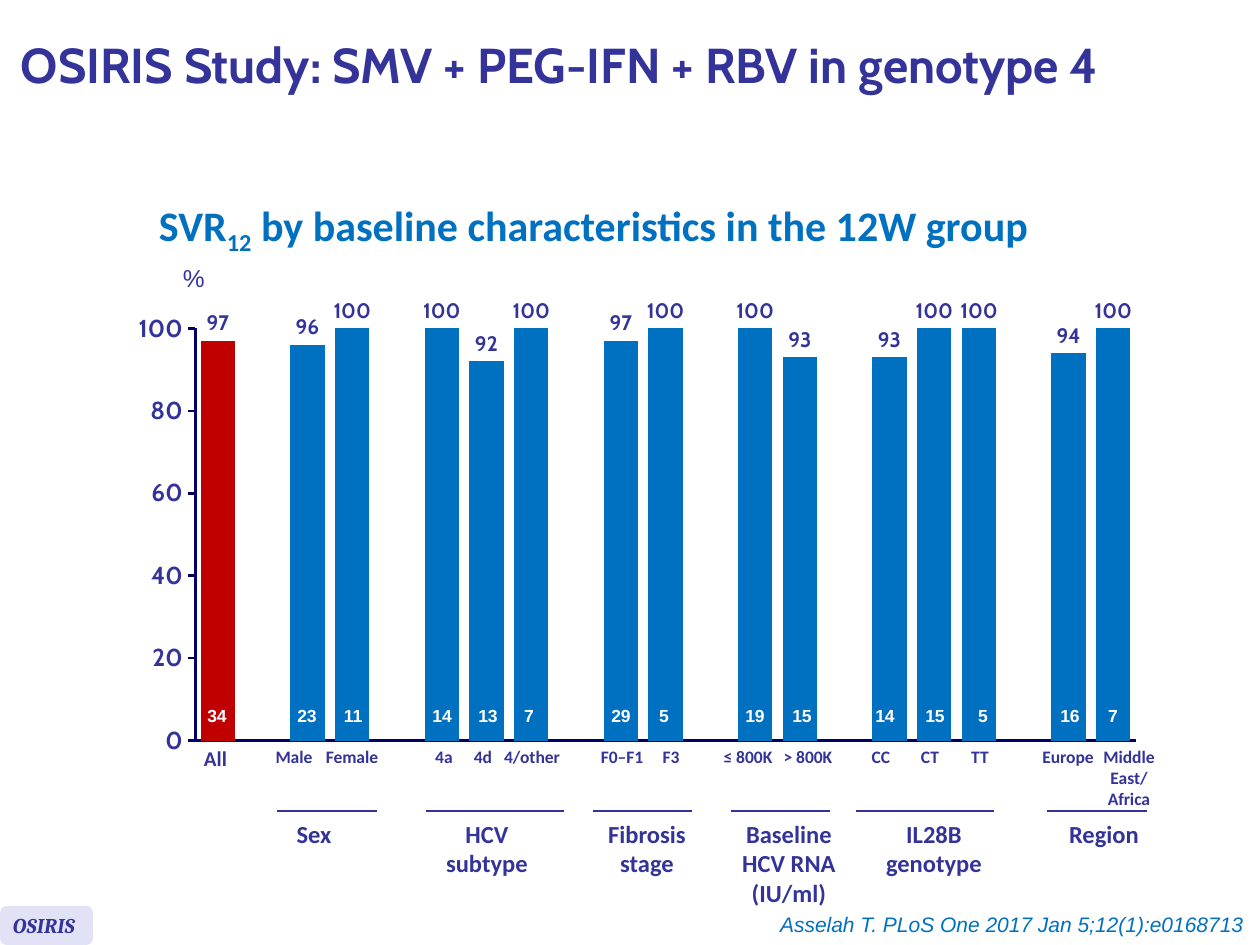
from lxml import etree
from pptx import Presentation
from pptx.chart.data import CategoryChartData
from pptx.dml.color import RGBColor
from pptx.enum.chart import XL_CHART_TYPE, XL_LABEL_POSITION, XL_TICK_LABEL_POSITION, XL_TICK_MARK
from pptx.enum.shapes import MSO_CONNECTOR, MSO_SHAPE
from pptx.enum.text import MSO_ANCHOR, PP_ALIGN
from pptx.oxml import parse_xml
from pptx.oxml.ns import nsdecls, qn
from pptx.util import Pt

COLUMNS = XL_CHART_TYPE.COLUMN_CLUSTERED
OUTSIDE_END = XL_LABEL_POSITION.OUTSIDE_END
NO_LABELS = XL_TICK_LABEL_POSITION.NONE
TICK_NONE, TICK_OUT = XL_TICK_MARK.NONE, XL_TICK_MARK.OUTSIDE
STRAIGHT = MSO_CONNECTOR.STRAIGHT
ROUNDED = MSO_SHAPE.ROUNDED_RECTANGLE
TOP, MIDDLE = MSO_ANCHOR.TOP, MSO_ANCHOR.MIDDLE
LEFT, CENTER, RIGHT = PP_ALIGN.LEFT, PP_ALIGN.CENTER, PP_ALIGN.RIGHT

EMU_PER_PX = 914400 / 126
COLORS = {
    "indigo": "333399", "navy": "000066", "blue": "0070C0", "red": "C00000",
    "lavender": "E2E2F6", "white": "FFFFFF", "black": "000000",
}
PLOT_AREA = {"x": 0.126, "y": 0.13, "w": 0.772, "h": 0.538}

# Overall bar: value, patients, centre of the patient count
OVERALL = (97, 34, 175)
# Group: name, rule start, rule end, name centre, bars
# Bar: label, label centre, value, patients, centre of the patient count
GROUPS = [
    ("Sex", 235, 335, 272, [
        ("Male", 252, 96, 23, 265), ("Female", 310, 100, 11, 311)]),
    ("HCV\nsubtype", 384, 522, 445, [
        ("4a", 402, 100, 14, 400), ("4d", 441, 92, 13, 446),
        ("4/other", 490, 100, 7, 487)]),
    ("Fibrosis\nstage", 551, 650, 605, [
        ("F0–F1", 580, 97, 29, 579), ("F3", 629, 100, 5, 622)]),
    ("Baseline\nHCV RNA\n(IU/ml)", 689, 788, 747, [
        ("≤ 800K", 706, 100, 19, 713), ("> 800K", 766, 93, 15, 760)]),
    ("IL28B\ngenotype", 814, 952, 892, [
        ("CC", 839, 93, 14, 843), ("CT", 888, 100, 15, 893),
        ("TT", 938, 100, 5, 941)]),
    ("Region", 1005, 1105, 1062, [
        ("Europe", 1026, 94, 16, 1028),
        ("Middle East/\nAfrica", 1087, 100, 7, 1071)]),
]


def px(length):
    return round(length * EMU_PER_PX)


def rgb(name):
    return RGBColor.from_string(COLORS[name])


def set_font(font, size, color, name, bold=False, italic=False):
    font.size, font.name = Pt(size), name
    font.bold, font.italic = bold, italic
    font.color.rgb = rgb(color)


def add_text(page, box, text, *, size, color="indigo", font="Calibri", bold=False,
             italic=False, align=LEFT, anchor=TOP, spacing=None, wrap=True,
             inset_x=13, inset_y=6, subscript=None):
    """Newlines become line breaks; the subscript part of the text is lowered."""
    frame = page.shapes.add_textbox(*map(px, box)).text_frame
    frame.word_wrap, frame.vertical_anchor = wrap, anchor
    frame.margin_left = frame.margin_right = px(inset_x)
    frame.margin_top = frame.margin_bottom = px(inset_y)
    para = frame.paragraphs[0]
    para.alignment = align
    if spacing:
        para.line_spacing = spacing
    for number, line in enumerate(text.split("\n")):
        if number:
            para.add_line_break()
        before, lowered, after = line.partition(subscript) if subscript else (line, "", "")
        for part in filter(None, (before, lowered, after)):
            span = para.add_run()
            span.text = part
            set_font(span.font, size, color, font, bold, italic)
            if part == lowered:
                span.font._element.set("baseline", "-25000")


def add_rule(page, start, end, y):
    rule = page.shapes.add_connector(STRAIGHT, px(start), px(y), px(end), px(y))
    rule.line.color.rgb = rgb("indigo")
    rule.line.width = Pt(1.5)
    etree.SubElement(rule._element.spPr, qn("a:effectLst"))


def style_axis(axis, tick_mark):
    axis.has_major_gridlines = False
    axis.major_tick_mark, axis.minor_tick_mark = tick_mark, TICK_NONE
    axis.format.line.color.rgb = rgb("navy")
    axis.format.line.width = Pt(1.5)


def fix_plot_area(chart):
    plot_area = chart.element.find(".//" + qn("c:plotArea"))
    for layout in plot_area.findall(qn("c:layout")):
        plot_area.remove(layout)
    sizes = "".join(f'<c:{key} val="{value}"/>' for key, value in PLOT_AREA.items())
    plot_area.insert(0, parse_xml(
        f'<c:layout {nsdecls("c")}><c:manualLayout><c:layoutTarget val="inner"/>'
        f'<c:xMode val="edge"/><c:yMode val="edge"/>{sizes}</c:manualLayout></c:layout>'))


def add_response_chart(page, box):
    values = [OVERALL[0]]
    for *_, bars in GROUPS:
        values += [None] + [bar[2] for bar in bars]
    data = CategoryChartData()
    data.categories = [str(number + 1) for number in range(len(values))]
    data.add_series("Series 1", values)
    chart = page.shapes.add_chart(COLUMNS, *map(px, box), data).chart
    chart.has_title = chart.has_legend = False
    set_font(chart.font, 18, "black", "Arial")
    fix_plot_area(chart)

    style_axis(chart.category_axis, TICK_NONE)
    chart.category_axis.tick_label_position = NO_LABELS
    scale = chart.value_axis
    style_axis(scale, TICK_OUT)
    scale.minimum_scale, scale.maximum_scale, scale.major_unit = 0, 100, 20
    set_font(scale.tick_labels.font, 14, "indigo", "Cabin", bold=True)

    plot = chart.plots[0]
    plot.gap_width, plot.vary_by_categories = 30, False
    series = plot.series[0]
    for target, color in ((series, "blue"), (series.points[0], "red")):
        target.format.fill.solid()
        target.format.fill.fore_color.rgb = rgb(color)
    labels = series.data_labels
    labels.show_value, labels.position = True, OUTSIDE_END
    set_font(labels.font, 12, "indigo", "Cabin", bold=True)


def add_bar_captions(page, box):
    """Patient counts inside the bars, then bar labels and group names below."""
    left, top = box[:2]

    def centred(text, centre, y, width, height, **style):
        place = (left + centre - width / 2, top + y, width, height)
        add_text(page, place, text, bold=True, align=CENTER, **style)

    def count(patients, centre):
        centred(str(patients), centre, 468, 56, 44, size=10, color="white",
                font="Arial", inset_x=0, inset_y=8)

    count(*OVERALL[1:])
    add_text(page, (left + 149, top + 511, 49, 38), "All", size=12, bold=True, wrap=False)
    for name, start, end, name_centre, bars in GROUPS:
        for label, label_centre, _, patients, count_centre in bars:
            count(patients, count_centre)
            width, height = (111, 77) if "\n" in label else (100, 34)
            centred(label, label_centre, 511, width, height, size=10)
        add_rule(page, left + start, left + end, top + 582)
        centred(name, name_centre, 582, 263, 45 + 30 * name.count("\n"),
                size=14, inset_x=15, inset_y=8)


def add_headings(page, box):
    left, top = box[:2]
    add_text(page, (left + 8, top + 6, 1239, 125),
             "OSIRIS Study: SMV + PEG-IFN + RBV in genotype 4",
             size=28, font="Cabin", bold=True, anchor=MIDDLE, spacing=0.85)
    add_text(page, (left + 146, top + 159, 964, 135),
             "SVR12 by baseline characteristics in the 12W group", subscript="12",
             size=24, color="blue", bold=True, anchor=MIDDLE, spacing=0.85)
    add_text(page, (left + 170, top + 257, 48, 43), "%", size=14, font="Arial", wrap=False)


def add_footer(page, box):
    left, top = box[:2]
    tag = page.shapes.add_shape(ROUNDED, *map(px, (left, top, 93, 39)))
    tag.shadow.inherit = False
    tag.fill.solid()
    tag.fill.fore_color.rgb = rgb("lavender")
    tag.line.fill.background()
    add_text(page, (left, top + 1, 96, 38), "OSIRIS", size=12, font="Cambria",
             bold=True, italic=True)
    add_text(page, (left + 756, top, 501, 38),
             "Asselah T. PLoS One 2017 Jan 5;12(1):e0168713",
             size=12, color="blue", font="Arial", italic=True, align=RIGHT)


def main():
    deck = Presentation()
    deck.slide_width, deck.slide_height = px(1260), px(945)
    page = deck.slides.add_slide(deck.slide_layouts[6])
    chart_box = (42, 229, 1218, 766)
    add_response_chart(page, chart_box)
    add_bar_captions(page, chart_box)
    add_headings(page, (0, 0, 1260, 300))
    add_footer(page, (0, 906, 1260, 39))
    deck.save("out.pptx")


if __name__ == "__main__":
    main()
